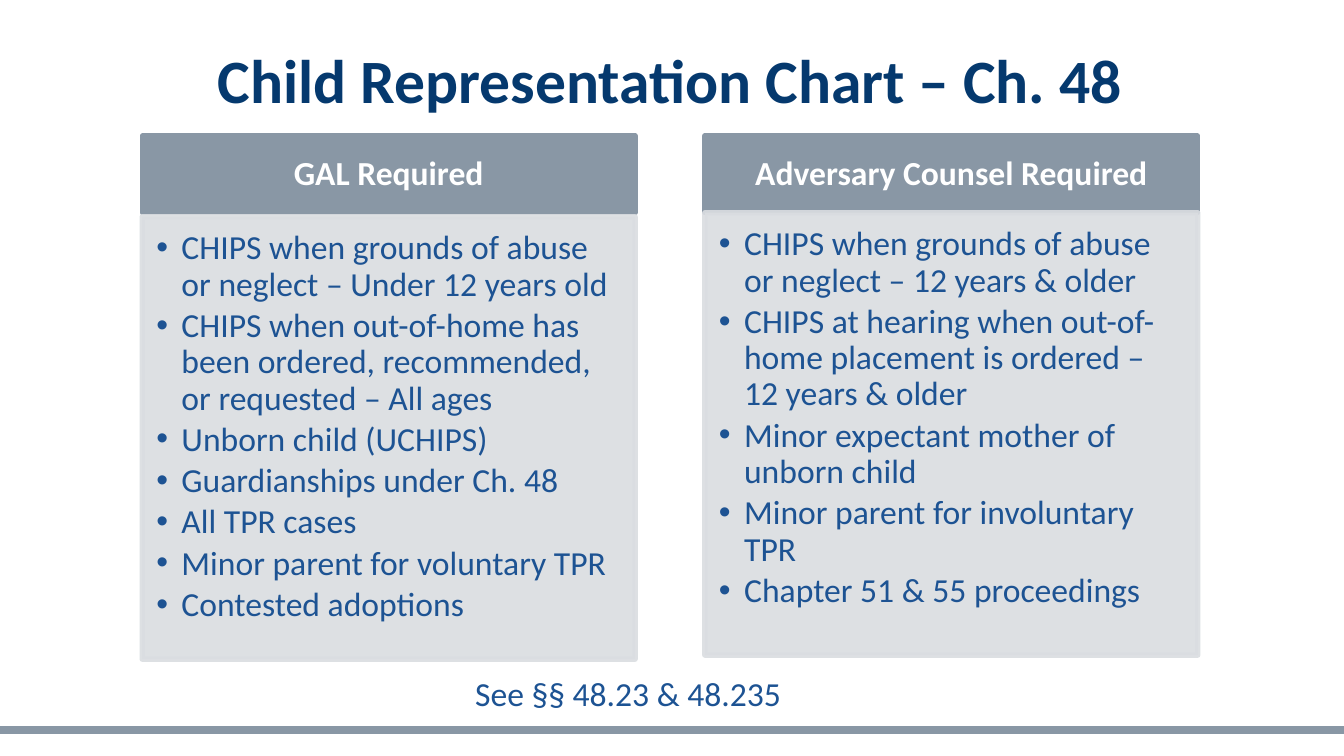
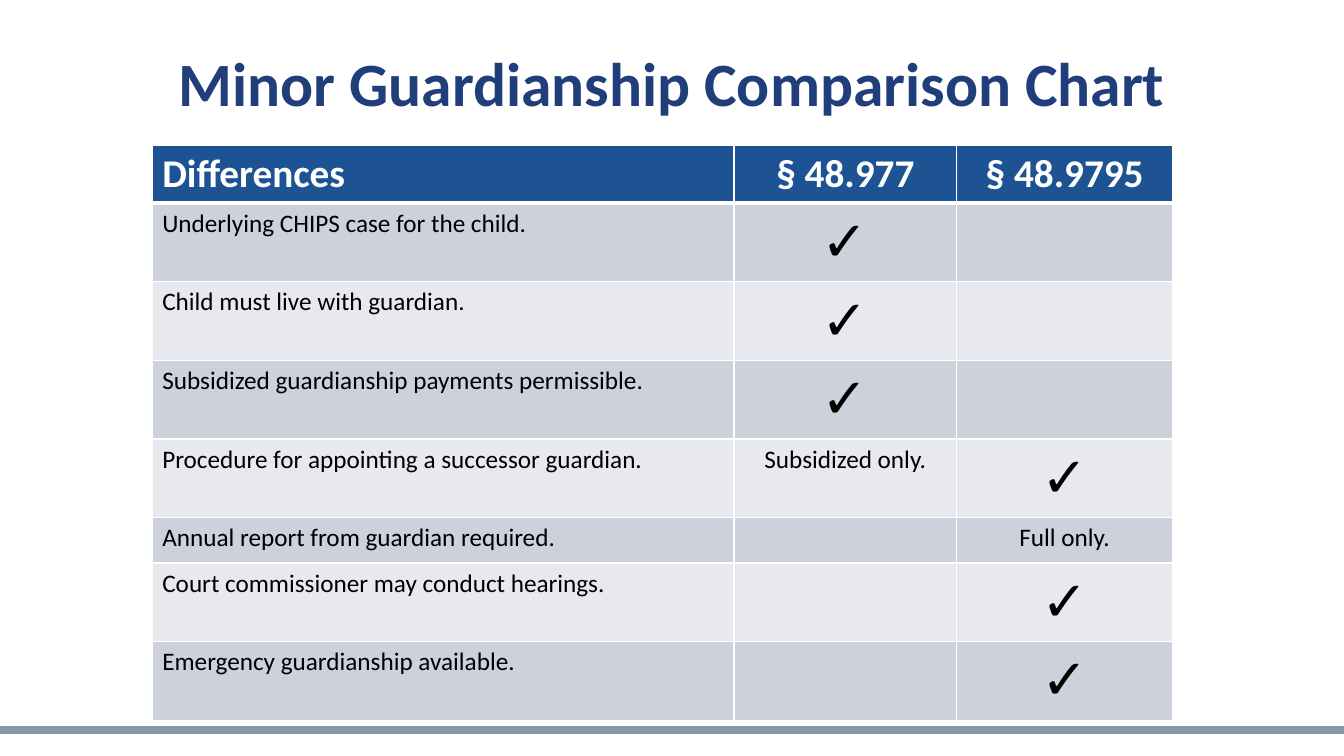
from lxml.etree import SubElement
from pptx import Presentation
from pptx.dml.color import RGBColor
from pptx.enum.shapes import MSO_CONNECTOR, MSO_SHAPE
from pptx.enum.text import MSO_ANCHOR, MSO_AUTO_SIZE, PP_ALIGN
from pptx.oxml.ns import qn
from pptx.util import Emu, Pt

PX = 9144  # one px is a hundredth of an inch
WIDE, HIGH = 1333, 750
FONT = "Calibri"
HUES = {
    "navy": "05396E", "royal": "1F3E7A", "blue": "1D5393", "slate": "8997A5",
    "mist": "DADDE1", "dark": "CDD1DC", "light": "E8E9EE",
    "white": "FFFFFF", "black": "000000",
}
TICK = "✓"

CARDS = [
    ("GAL Required", 141, 215, [
        "CHIPS when grounds of abuse or neglect – Under 12 years old",
        "CHIPS when out-of-home has been ordered, recommended, or requested – All ages",
        "Unborn child (UCHIPS)",
        "Guardianships under Ch. 48",
        "All TPR cases",
        "Minor parent for voluntary TPR",
        "Contested adoptions",
    ]),
    ("Adversary Counsel Required", 699, 211, [
        "CHIPS when grounds of abuse or neglect – 12 years & older",
        "CHIPS at hearing when out-of-home placement is ordered – 12 years & older",
        "Minor expectant mother of unborn child",
        "Minor parent for involuntary TPR",
        "Chapter 51 & 55 proceedings",
    ]),
]

COLS = [577, 221, 214]
ROWS = [
    ("Differences", "§ 48.977", "§ 48.9795"),
    ("Underlying CHIPS case for the child.", TICK, ""),
    ("Child must live with guardian.", TICK, ""),
    ("Subsidized guardianship payments permissible.", TICK, ""),
    ("Procedure for appointing a successor guardian.", "Subsidized only.", TICK),
    ("Annual report from guardian required.", "", "Full only."),
    ("Court commissioner may conduct hearings.", "", TICK),
    ("Emergency guardianship available.", "", TICK),
]


def px(*nums):
    return [Emu(num * PX) for num in nums]


def hue(name):
    return RGBColor.from_string(HUES[name])


def style(para, size, tint, bold=False, align=PP_ALIGN.CENTER):
    para.alignment = align
    for run in para.runs:
        font = run.font
        font.name, font.size, font.bold = FONT, Pt(size), bold
        font.color.rgb = hue(tint)


def inset(frame, *sides):
    (frame.margin_left, frame.margin_top,
     frame.margin_right, frame.margin_bottom) = px(*sides)


def fade(paint, share):
    """Set the opacity of a solid fill or line, in percent."""
    color = paint.find(".//" + qn("a:srgbClr"))
    SubElement(color, qn("a:alpha"), val=str(share * 1000))


def bullet(para):
    props = para._p.get_or_add_pPr()
    props.set("marL", str(25 * PX))
    props.set("indent", str(-25 * PX))
    SubElement(props, qn("a:buFont"), typeface="Arial")
    SubElement(props, qn("a:buChar"), char="•")


def add_page(deck, text, tint, left, top):
    """Slide with the shared title style and foot line."""
    page = deck.slides.add_slide(deck.slide_layouts[5])
    foot = page.shapes.add_connector(MSO_CONNECTOR.STRAIGHT, *px(0, 724, WIDE, 724))
    foot.line.color.rgb = hue("slate")
    foot.line.width = Pt(6)
    SubElement(foot._element.spPr, qn("a:effectLst"))
    title = page.shapes.title
    title.left, title.top, title.width, title.height = px(left, top, 1150, 145)
    frame = title.text_frame
    frame.text = text
    frame.auto_size = MSO_AUTO_SIZE.NONE
    frame.vertical_anchor = MSO_ANCHOR.MIDDLE
    style(frame.paragraphs[0], 44, tint, True)
    return page


def add_panel(page, box, tint):
    panel = page.shapes.add_shape(MSO_SHAPE.RECTANGLE, *px(*box))
    panel.shadow.inherit = False
    panel.fill.solid()
    panel.fill.fore_color.rgb = hue(tint)
    panel.line.color.rgb = hue(tint)
    panel.line.width = Pt(3.78)
    panel.text_frame.word_wrap = True
    return panel


def add_card(page, head, left, top, items):
    # Heading
    frame = add_panel(page, (left, 135, 489, 76), "slate").text_frame
    inset(frame, 19, 11, 19, 11)
    frame.vertical_anchor = MSO_ANCHOR.MIDDLE
    frame.text = head
    frame.paragraphs[0].line_spacing = 0.9
    style(frame.paragraphs[0], 24, "white", True)

    # Bulleted body
    panel = add_panel(page, (left, top, 489, 439), "mist")
    props = panel._element.spPr
    fade(props.find(qn("a:solidFill")), 90)
    fade(props.find(qn("a:ln")), 90)
    frame = panel.text_frame
    inset(frame, 14, 14, 19, 21)
    frame.vertical_anchor = MSO_ANCHOR.TOP
    frame.text = "\n".join(items)
    for para in frame.paragraphs:
        bullet(para)
        para.line_spacing = 0.9
        para.space_after = Pt(3.6)
        style(para, 24, "blue", align=PP_ALIGN.LEFT)


def add_note(page, text, box):
    frame = page.shapes.add_textbox(*px(*box)).text_frame
    frame.word_wrap = True
    frame.vertical_anchor = MSO_ANCHOR.MIDDLE
    frame.text = text
    style(frame.paragraphs[0], 24, "blue")


def edge(cell, top, base):
    """White cell borders; top and base are widths in points."""
    props = cell._tc.get_or_add_tcPr()
    for side, width in zip("LRTB", (1, 1, top, base)):
        line = SubElement(props, qn("a:ln" + side), w=str(Pt(width)))
        fill = SubElement(line, qn("a:solidFill"))
        SubElement(fill, qn("a:srgbClr"), val=HUES["white"])


def fill_cell(cell, text, row, col):
    head = row == 0
    edge(cell, 3 if row == 1 else 1, 3 if head else 1)
    cell.fill.solid()
    cell.fill.fore_color.rgb = hue("blue" if head else "dark" if row % 2 else "light")
    cell.text = text
    size = 28 if head else 40 if text == TICK else 18
    style(cell.text_frame.paragraphs[0], size, "white" if head else "black",
          head, PP_ALIGN.CENTER if col else PP_ALIGN.LEFT)


def add_grid(page, left, top):
    highs = [52] + [78 if TICK in row else 45 for row in ROWS[1:]]
    grid = page.shapes.add_table(
        len(ROWS), len(COLS), *px(left, top, sum(COLS), sum(highs))).table
    for col, wide in zip(grid.columns, COLS):
        col.width = Emu(wide * PX)
    for row, high in zip(grid.rows, highs):
        row.height = Emu(high * PX)
    for row, texts in enumerate(ROWS):
        for col, text in enumerate(texts):
            fill_cell(grid.cell(row, col), text, row, col)


def main():
    deck = Presentation()
    deck.slide_width, deck.slide_height = px(WIDE, HIGH)

    # Representation cards
    page = add_page(deck, "Child Representation Chart – Ch. 48", "navy", 90, 6)
    for card in CARDS:
        add_card(page, *card)
    add_note(page, "See §§ 48.23 & 48.235", (23, 626, 1200, 124))

    # Guardianship table
    page = add_page(deck, "Minor Guardianship Comparison Chart", "royal", 92, 9)
    add_grid(page, 151, 144)

    deck.save("out.pptx")


if __name__ == "__main__":
    main()
